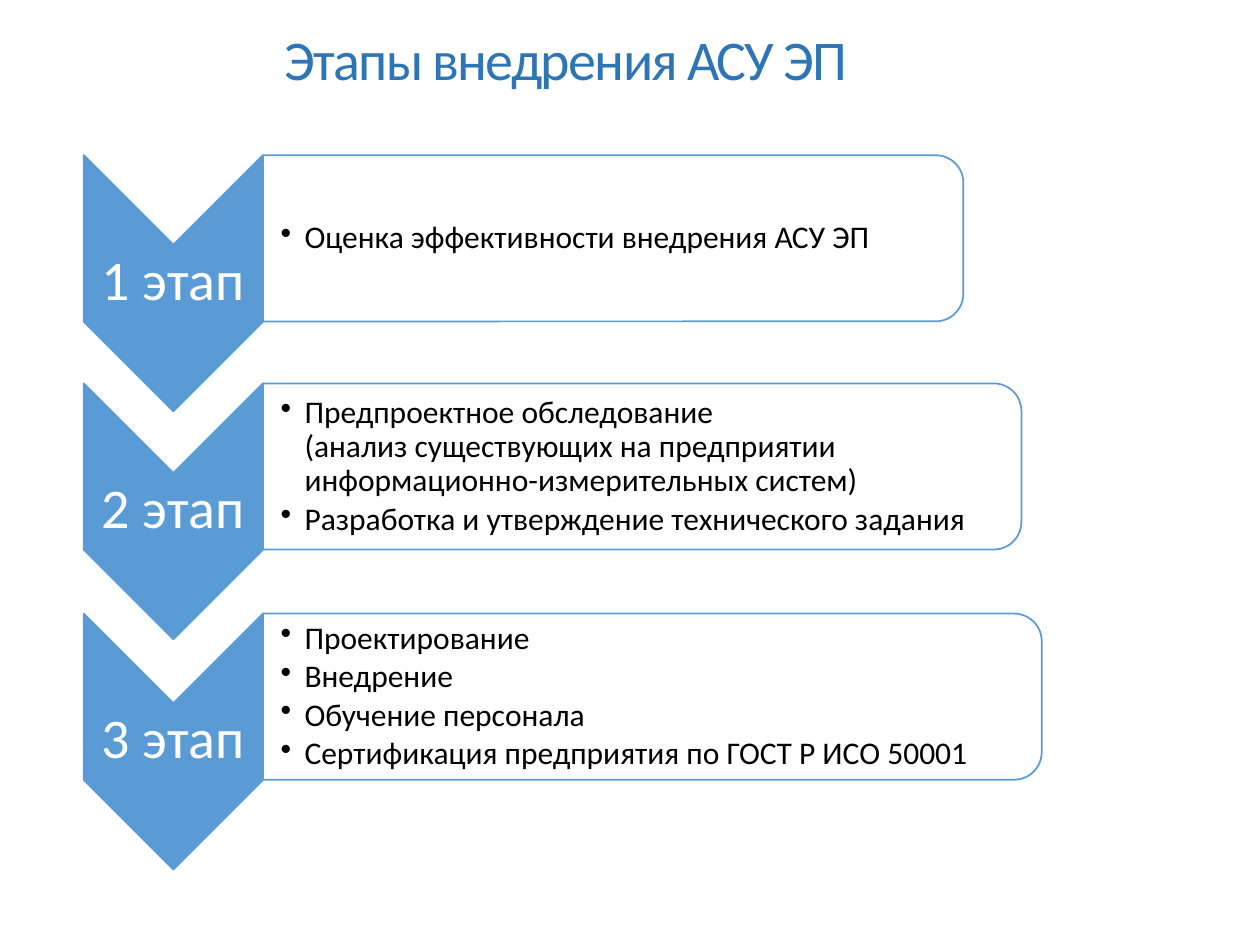
from lxml import etree
from pptx import Presentation
from pptx import util as u
from pptx.dml.color import RGBColor
from pptx.enum import shapes, text
from pptx.oxml.ns import qn

HUES = {"title": "2E75B6", "blue": "5B9BD5", "white": "FFFFFF", "black": "000000"}

# Top of each stage, width of its panel, bullet lines (all in cm)
STAGES = [
    (3.13, 14.12, ["Оценка эффективности внедрения АСУ ЭП"]),
    (7.73, 15.29, [
        "Предпроектное обследование \v(анализ существующих на предприятии "
        "информационно-измерительных систем)",
        "Разработка и утверждение технического задания"]),
    (12.37, 15.7, ["Проектирование", "Внедрение", "Обучение персонала",
                   "Сертификация предприятия по ГОСТ Р ИСО 50001"]),
]


def hue(name):
    return RGBColor.from_string(HUES[name])


def write(frame, lines, size=18, color="black", align=text.PP_ALIGN.LEFT,
          pad=(0.25, 0.13), space=None, after=0, track=None, bullet=False):
    """Fill a text frame; pad holds the left inset and the other insets."""
    frame.word_wrap = True
    frame.vertical_anchor = text.MSO_ANCHOR.MIDDLE
    frame.margin_left = u.Cm(pad[0])
    frame.margin_top = frame.margin_right = frame.margin_bottom = u.Cm(pad[1])
    for i, line in enumerate(lines):
        par = frame.paragraphs[0] if i == 0 else frame.add_paragraph()
        par.text = line
        par.alignment = align
        par.line_spacing = space
        par.space_after = u.Pt(after)
        for run in par.runs:
            run.font.name = "Calibri"
            run.font.size = u.Pt(size)
            run.font.color.rgb = hue(color)
            if track:
                run.font._element.set("spc", str(track))
        if bullet:
            props = par._p.get_or_add_pPr()
            props.set("marL", str(u.Cm(0.48)))
            props.set("indent", str(-u.Cm(0.48)))
            etree.SubElement(props, qn("a:buChar")).set("char", "•")


class Deck:
    font_big = 32
    line = 1

    def __init__(self):
        self.prs = Presentation()
        self.prs.slide_width, self.prs.slide_height = u.Cm(25.4), u.Cm(19.05)
        self.slide = self.prs.slides.add_slide(self.prs.slide_layouts[6])

    def title(self, words):
        box = self.slide.shapes.add_shape(
            shapes.MSO_SHAPE.ROUNDED_RECTANGLE,
            u.Cm(1.85), u.Cm(0.33), u.Cm(19), u.Cm(1.68))
        box.adjustments[0] = 0
        box.shadow.inherit = False
        box.fill.background()
        box.line.fill.background()
        write(box.text_frame, [words], size=self.font_big, color="title",
              align=text.PP_ALIGN.CENTER, track=-100)

    def turned(self, kind, left, top, wide, high, fill):
        """Add a shape turned by 90 degrees that shows in the given frame."""
        shift = (wide - high) / 2
        shape = self.slide.shapes.add_shape(
            kind, u.Cm(left + shift), u.Cm(top - shift), u.Cm(high), u.Cm(wide))
        shape.rotation = 90
        shape.shadow.inherit = False
        shape.fill.solid()
        shape.fill.fore_color.rgb = hue(fill)
        shape.line.color.rgb = hue("blue")
        shape.line.width = u.Pt(self.line)
        return shape

    def label(self, left, top, wide, high, lines, **style):
        box = self.slide.shapes.add_textbox(
            u.Cm(left), u.Cm(top), u.Cm(wide), u.Cm(high))
        write(box.text_frame, lines, space=0.9, **style)

    def stage(self, num, top, wide, lines):
        # Chevron with the stage number
        self.turned(shapes.MSO_SHAPE.CHEVRON, 1.69, top, 3.61, 5.16, "blue")
        self.label(1.69, top + 1.79, 3.61, 1.55, [f"{num} этап"],
                   size=self.font_big, color="white",
                   align=text.PP_ALIGN.CENTER, pad=(0.05, 0.05))
        # Panel with the bullet list
        panel = self.turned(shapes.MSO_SHAPE.ROUND_2_SAME_RECTANGLE,
                            5.3, top, wide, 3.35, "white")
        tint = panel._element.spPr.find(qn("a:solidFill"))[0]
        etree.SubElement(tint, qn("a:alpha")).set("val", "90000")
        self.label(5.3, top + 0.17, wide - 0.16, 3.02, lines,
                   pad=(0.36, 0.03), after=2.5, bullet=True)


def main():
    deck = Deck()
    deck.title("Этапы внедрения АСУ ЭП")
    for num, (top, wide, lines) in enumerate(STAGES, 1):
        deck.stage(num, top, wide, lines)
    deck.prs.save("out.pptx")


if __name__ == "__main__":
    main()
